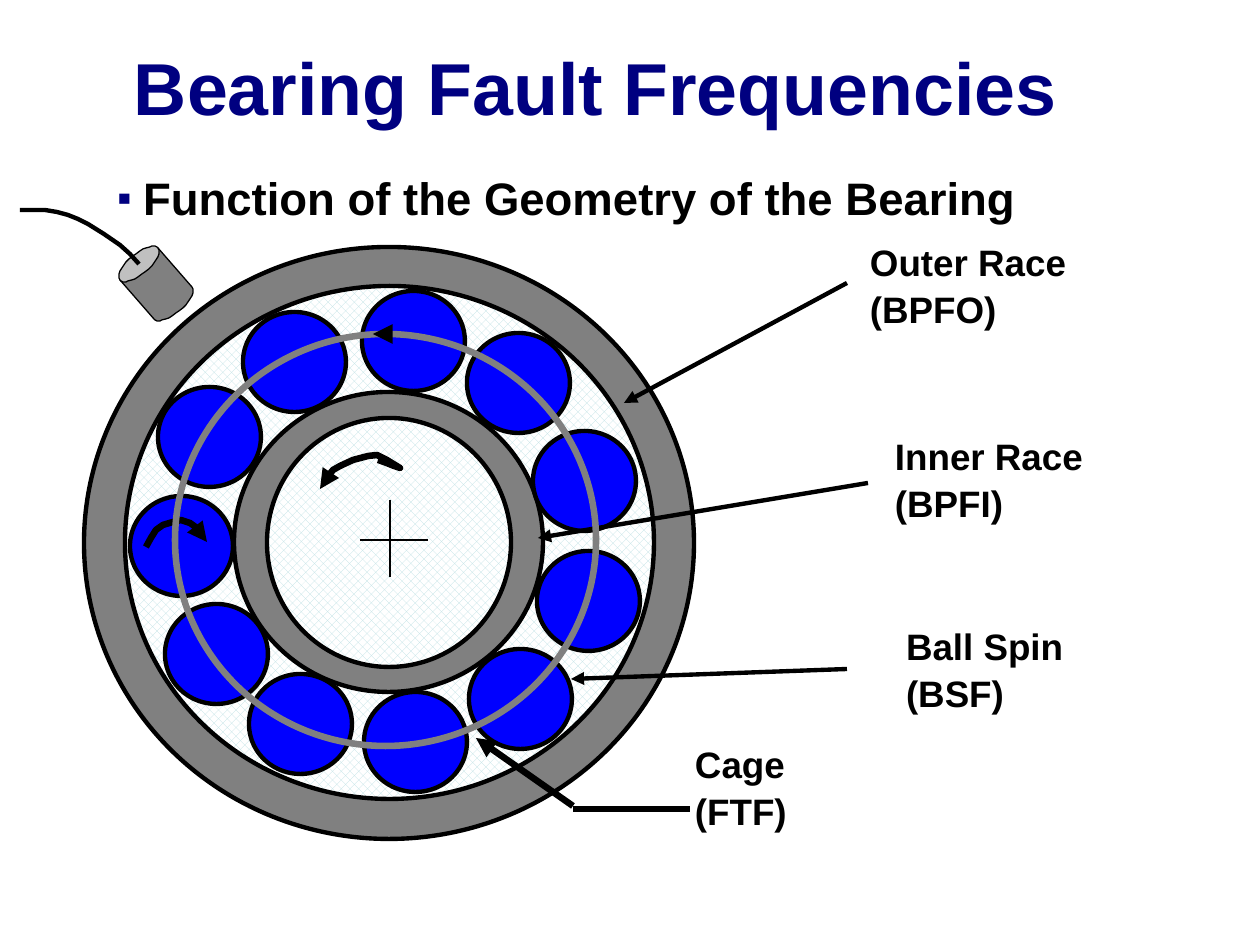
import math

from lxml import etree
from pptx import Presentation
from pptx import util as u
from pptx.dml.color import RGBColor
from pptx.enum import dml, shapes, text
from pptx.oxml.ns import qn

PX = 914400 / 126
COLORS = {"title": "000080", "ink": "000000", "steel": "808080", "lid": "C0C0C0",
          "ball": "0000FF", "tint": "BBE0E3", "paper": "FFFFFF"}


def px(n):
    return u.Emu(round(n * PX))


def rgb(name):
    return RGBColor.from_string(COLORS[name])


def style_line(sp, color, width, **ends):
    """Set colour and width; ends maps headEnd or tailEnd to an arrow type."""
    sp.line.color.rgb = rgb(color)
    sp.line.width = u.Pt(width)
    ln = sp.line._get_or_add_ln()
    for tag in ("headEnd", "tailEnd"):
        if tag in ends:
            etree.SubElement(ln, qn("a:" + tag), type=ends[tag])


def add_text(s, box, lines, size, color="ink", spacing=1.0,
             anchor=text.MSO_ANCHOR.TOP):
    tf = s.shapes.add_textbox(*map(px, box)).text_frame
    tf.word_wrap = True
    tf.vertical_anchor = anchor
    tf.margin_left = tf.margin_right = tf.margin_top = tf.margin_bottom = 0
    tf.text = "\n".join(lines)
    for p in tf.paragraphs:
        p.line_spacing = spacing
        for r in p.runs:
            r.font.name = "Arial"
            r.font.size = u.Pt(size)
            r.font.bold = True
            r.font.color.rgb = rgb(color)
    return tf


def add_line(s, start, end, width, **ends):
    c = s.shapes.add_connector(shapes.MSO_CONNECTOR.STRAIGHT,
                               *map(px, (*start, *end)))
    style_line(c, "ink", width, **ends)
    etree.SubElement(c._element.spPr, qn("a:effectLst"))


def add_ellipse(s, box, fill=None, line="ink", width=2.5, back=None):
    """Draw an ellipse; with back, fill it with a 50% dot pattern."""
    sp = s.shapes.add_shape(shapes.MSO_SHAPE.OVAL, *map(px, box))
    sp.shadow.inherit = False
    if back:
        sp.fill.patterned()
        sp.fill.pattern = dml.MSO_PATTERN.PERCENT_50
        sp.fill.fore_color.rgb = rgb(fill)
        sp.fill.back_color.rgb = rgb(back)
    elif fill:
        sp.fill.solid()
        sp.fill.fore_color.rgb = rgb(fill)
    else:
        sp.fill.background()
    style_line(sp, line, width)


def add_outline(s, x, y, points, width, fill=None, **ends):
    """Draw straight segments through points given relative to (x, y)."""
    points = [(x + dx, y + dy) for dx, dy in points]
    fb = s.shapes.build_freeform(*points[0], scale=PX)
    fb.add_line_segments(points[1:], close=fill is not None)
    sp = fb.convert_to_shape()
    sp.shadow.inherit = False
    if fill:
        sp.fill.solid()
        sp.fill.fore_color.rgb = rgb(fill)
    else:
        sp.fill.background()
    style_line(sp, "ink", width, **ends)


def tilted_arc(cx, cy, start, end):
    """Points on the rim of the sensor, an ellipse tilted by 40 degrees."""
    cos, sin = math.cos(math.radians(40)), math.sin(math.radians(40))
    arc = []
    for t in range(start, end + 1, 10):
        a, b = 25 * math.cos(math.radians(t)), 10 * math.sin(math.radians(t))
        arc.append((cx + a * cos + b * sin, cy - a * sin + b * cos))
    return arc


def heading(s, x, y, w):
    add_text(s, (x + 16, y, w - 28, 88), ["Bearing Fault Frequencies"], 42, "title",
             anchor=text.MSO_ANCHOR.BOTTOM)
    tf = add_text(s, (x, y + 123, w, 68),
                  ["Function of the Geometry of the Bearing"], 26, spacing=1.1)
    pPr = tf.paragraphs[0]._p.get_or_add_pPr()
    pPr.set("marL", str(px(25)))
    pPr.set("indent", str(-px(25)))
    clr = etree.SubElement(pPr, qn("a:buClr"))
    etree.SubElement(clr, qn("a:srgbClr"), val=COLORS["title"])
    etree.SubElement(pPr, qn("a:buSzPct"), val="46000")
    etree.SubElement(pPr, qn("a:buFont"), typeface="Arial")
    etree.SubElement(pPr, qn("a:buChar"), char="■")


def bearing(s, x, y):
    rings = [((0, 0, 610, 592), "steel", "steel"), ((41, 39, 529, 513), "tint", "paper"),
             ((150, 145, 309, 300), "steel", "steel"), ((183, 171, 244, 249), "tint", "paper")]
    for (dx, dy, w, h), fill, back in rings:
        add_ellipse(s, (x + dx, y + dy, w, h), fill, back=back)
    balls = [(278, 44), (46, 249), (74, 140), (383, 86), (81, 357), (449, 184),
             (165, 427), (159, 65), (453, 304), (385, 402), (280, 445)]
    for dx, dy in balls:
        add_ellipse(s, (x + dx, y + dy, 103, 100), "ball")


def callouts(s, x, y):
    parts = [(("Outer Race", "(BPFO)"), (246, 0), (223, 45), (0, 165)),
             (("Inner Race", "(BPFI)"), (271, 194), (244, 245), (-86, 300)),
             (("Ball Spin", "(BSF)"), (282, 384), (223, 431), (-53, 441))]
    for lines, (dx, dy), (x1, y1), (x2, y2) in parts:
        add_line(s, (x + x1, y + y1), (x + x2, y + y2), 2.5, tailEnd="triangle")
        add_text(s, (x + dx, y + dy, 205, 96), lines, 21, spacing=1.05)


def sensor(s, x, y):
    lid = (119, 54)
    base = (lid[0] + 34, lid[1] + 39)
    body = tilted_arc(*base, 0, 180) + tilted_arc(*lid, 180, 180) + tilted_arc(*lid, 0, 0)
    add_outline(s, x, y, body, 0.75, "steel")
    add_outline(s, x, y, tilted_arc(*lid, 0, 350), 0.75, "lid")
    wire = [lid, (110, 44), (100, 35), (84, 24), (68, 14), (58, 9),
            (48, 5), (37, 2), (25, 0), (0, 0)]
    add_outline(s, x, y, wire, 2.5)


def rotation_marks(s, x, y):
    """Shaft centre cross, shaft rotation arrow and ball spin arrow."""
    add_line(s, (x + 306, y + 253), (x + 306, y + 330), 1.5)
    add_line(s, (x + 276, y + 293), (x + 344, y + 293), 1.5)
    shaft = [(236, 242), (240, 235), (244, 229), (249, 223), (256, 219), (269, 213),
             (284, 209), (293, 208), (303, 213), (311, 218), (316, 221), (310, 219),
             (300, 215), (294, 213)]
    add_outline(s, x, y, shaft, 3.75, headEnd="triangle")
    spin = [(62, 300), (67, 291), (72, 283), (79, 278), (89, 275), (97, 273),
            (106, 276), (113, 281), (119, 289), (123, 295)]
    add_outline(s, x, y, spin, 3.75, tailEnd="triangle")


def cage(s, x, y):
    add_line(s, (x + 398, y + 472), (x + 301, y + 404), 3.75, tailEnd="triangle")
    add_line(s, (x + 398, y + 475), (x + 515, y + 475), 3.75)
    add_text(s, (x + 520, y + 406, 169, 90), ["Cage (FTF)"], 21, spacing=1.05)
    add_ellipse(s, (x, y, 421, 412), line="steel", width=3.75)
    add_line(s, (x + 203, y), (x + 198, y), 3.75, tailEnd="triangle")


def main():
    prs = Presentation()
    prs.slide_width, prs.slide_height = px(1260), px(945)
    s = prs.slides.add_slide(prs.slide_layouts[6])
    heading(s, 118, 42, 1100)
    bearing(s, 84, 247)
    callouts(s, 624, 238)
    sensor(s, 20, 210)
    rotation_marks(s, 84, 247)
    cage(s, 175, 334)
    prs.save("out.pptx")


if __name__ == "__main__":
    main()
